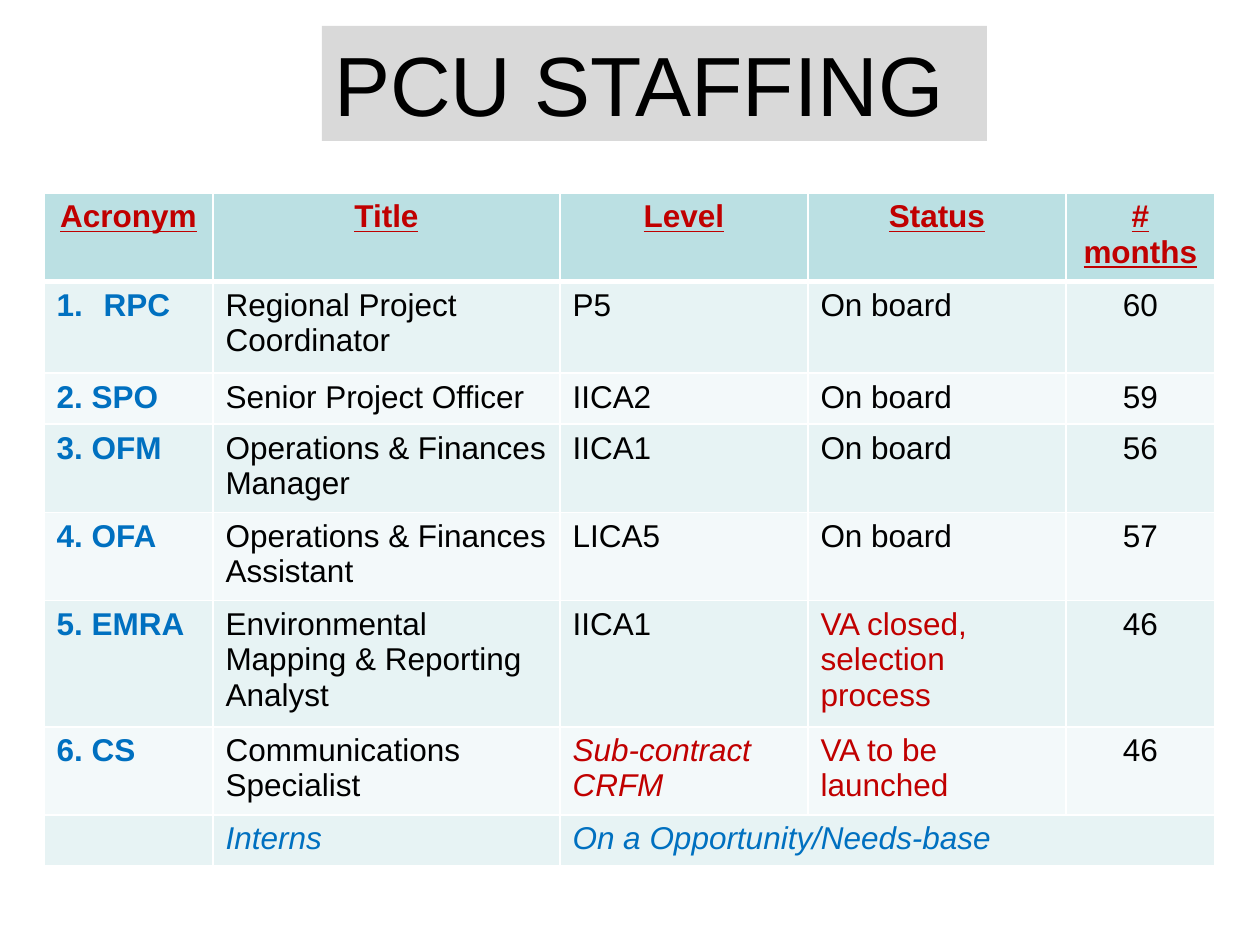
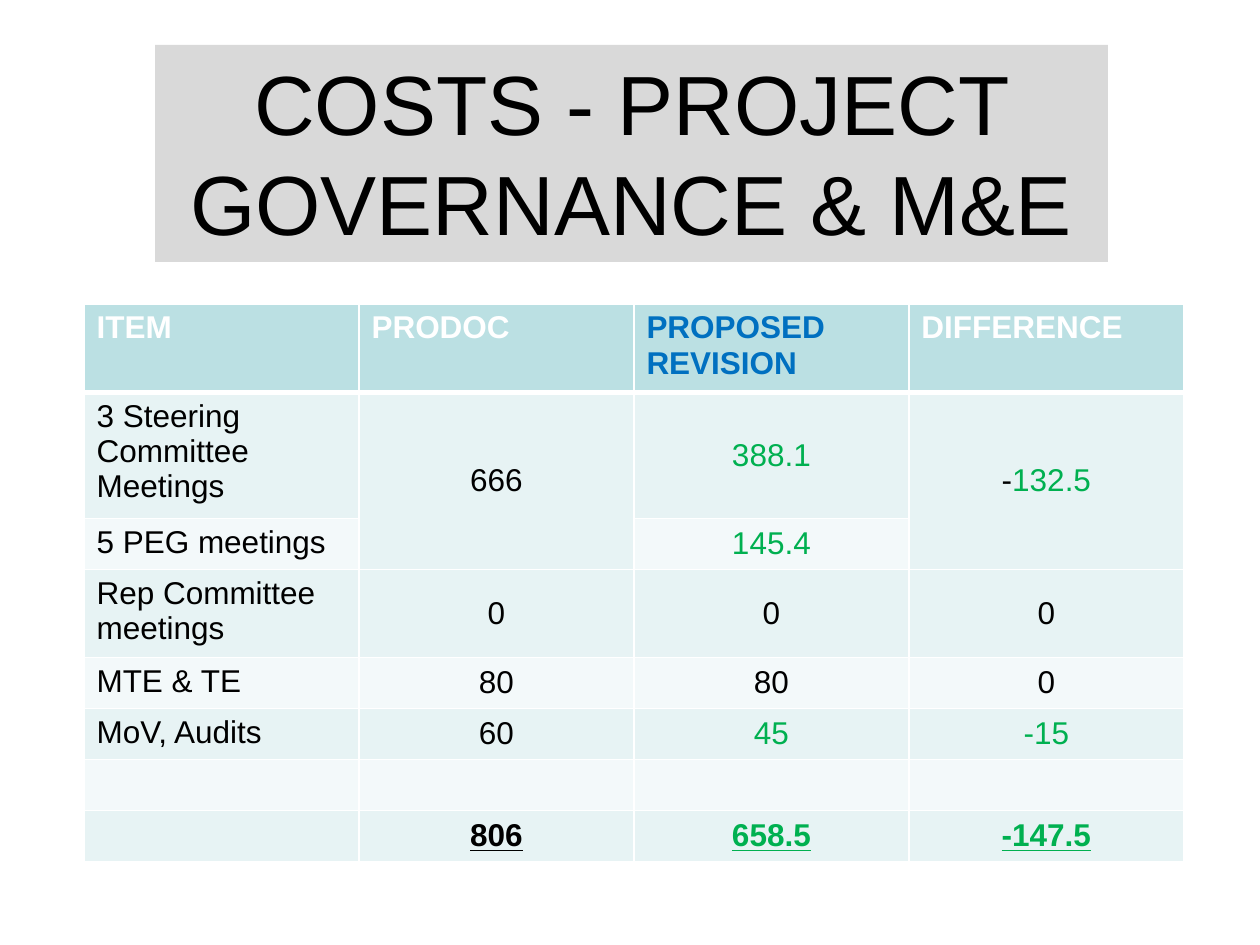
from lxml import etree
from pptx import Presentation
from pptx import util as u
from pptx.dml.color import RGBColor
from pptx.enum import shapes, text
from pptx.oxml import ns

PX = u.Inches(1) / 126
FONT = "Arial"
COLOURS = {
    "black": "000000", "white": "FFFFFF", "red": "C00000", "blue": "0070C0",
    "green": "00B050", "title": "D9D9D9", "header": "BBE0E3",
    "odd": "E7F3F4", "even": "F3F9FA",
}
BOLD = {"bold": True}
ITALIC = {"italic": True}
TOTAL = {"bold": True, "underline": True}

# Each style is a colour name and the emphasis set on the run.
STYLES = {
    "plain": ("black", {}),
    "green": ("green", {}),
    "red": ("red", {}),
    "acronym": ("blue", BOLD),
    "staff header": ("red", TOTAL),
    "cost header": ("white", BOLD),
    "red italic": ("red", ITALIC),
    "blue italic": ("blue", ITALIC),
    "total": ("black", TOTAL),
    "green total": ("green", TOTAL),
}

STAFF_HEADERS = ["Acronym", "Title", "Level", "Status", "# months"]
STAFF = [
    ["RPC", "Regional Project Coordinator", "P5", "On board", "60"],
    ["2. SPO", "Senior Project Officer", "IICA2", "On board", "59"],
    ["3. OFM", "Operations & Finances Manager", "IICA1", "On board", "56"],
    ["4. OFA", "Operations & Finances Assistant", "LICA5", "On board", "57"],
    ["5. EMRA", "Environmental Mapping & Reporting Analyst", "IICA1",
     ("VA closed, selection process", "red"), "46"],
    ["6. CS", "Communications Specialist", ("Sub-contract CRFM", "red italic"),
     ("VA to be launched", "red"), "46"],
    ["", ("Interns", "blue italic"),
     ("On a Opportunity/Needs-base", "blue italic"), "", ""],
]
COST_HEADERS = ["ITEM", "PRODOC", ("PROPOSED REVISION", "acronym"), "DIFFERENCE"]
COSTS = [
    ["3 Steering Committee Meetings", "666", ("388.1", "green"),
     [("-", "plain"), ("132.5", "green")]],
    ["5 PEG meetings", "", ("145.4", "green"), ""],
    ["Rep Committee meetings", "0", "0", "0"],
    ["MTE & TE", "80", "80", "0"],
    ["MoV, Audits", "60", ("45", "green"), ("-15", "green")],
    ["", "", "", ""],
    ["", ("806", "total"), ("658.5", "green total"), ("-147.5", "green total")],
]


def px(length):
    return u.Emu(round(length * PX))


def rgb(name):
    return RGBColor.from_string(COLOURS[name])


def format_run(run, size, style="plain"):
    colour, emphasis = STYLES[style]
    run.font.name = FONT
    run.font.size = u.Pt(size)
    run.font.color.rgb = rgb(colour)
    for name in ("bold", "italic", "underline"):
        setattr(run.font, name, emphasis.get(name, False))


def add_title(slide, box, title, alignment):
    shape = slide.shapes.add_shape(shapes.MSO_SHAPE.RECTANGLE, *map(px, box))
    shape.shadow.inherit = False
    shape.fill.solid()
    shape.fill.fore_color.rgb = rgb("title")
    shape.line.fill.background()
    frame = shape.text_frame
    frame.word_wrap = True
    frame.auto_size = text.MSO_AUTO_SIZE.SHAPE_TO_FIT_TEXT
    frame.vertical_anchor = text.MSO_ANCHOR.TOP
    frame.text = title
    frame.paragraphs[0].alignment = alignment
    format_run(frame.paragraphs[0].runs[0], 48)


def set_borders(cell, row):
    """White cell edges, with a thicker rule below the header row."""
    widths = {"L": 1, "R": 1, "T": 3 if row == 1 else 1, "B": 3 if row == 0 else 1}
    properties = cell._tc.get_or_add_tcPr()
    for side, width in widths.items():
        line = etree.SubElement(properties, ns.qn(f"a:ln{side}"), w=str(u.Pt(width)))
        fill = etree.SubElement(line, ns.qn("a:solidFill"))
        etree.SubElement(fill, ns.qn("a:srgbClr"), val=COLOURS["white"])


def number_paragraph(paragraph, indent):
    properties = paragraph._p.get_or_add_pPr()
    properties.set("marL", str(px(indent)))
    properties.set("indent", str(-px(indent)))
    etree.SubElement(properties, ns.qn("a:buFont"), typeface="+mj-lt")
    etree.SubElement(properties, ns.qn("a:buAutoNum"), type="arabicPeriod")


def fill_cell(cell, content, default_style, alignment):
    """Content is a string, a (string, style) pair or a list of such pairs."""
    if isinstance(content, str):
        content = (content, default_style)
    pieces = content if isinstance(content, list) else [content]
    paragraph = cell.text_frame.paragraphs[0]
    paragraph.alignment = alignment
    for words, style in pieces:
        if words:
            run = paragraph.add_run()
            run.text = words
            format_run(run, 18, style)


def add_banded_table(slide, left, top, widths, heights, rows, merges, cell_format):
    """cell_format(row, column) gives the default style, alignment and anchor."""
    frame = slide.shapes.add_table(len(rows), len(widths), px(left), px(top),
                                   px(sum(widths)), px(sum(heights)))
    table = frame.table
    for column, width in zip(table.columns, widths):
        column.width = px(width)
    for table_row, height in zip(table.rows, heights):
        table_row.height = px(height)
    for first, last in merges:
        table.cell(*first).merge(table.cell(*last))
    for row, contents in enumerate(rows):
        band = "header" if row == 0 else "odd" if row % 2 else "even"
        for column, content in enumerate(contents):
            cell = table.cell(row, column)
            set_borders(cell, row)
            cell.fill.solid()
            cell.fill.fore_color.rgb = rgb(band)
            style, alignment, anchor = cell_format(row, column)
            cell.vertical_anchor = anchor
            fill_cell(cell, content, style, alignment)
    return table


def staff_format(row, column):
    style = "staff header" if row == 0 else "plain" if column else "acronym"
    centred = row == 0 or column == 4
    alignment = text.PP_ALIGN.CENTER if centred else text.PP_ALIGN.LEFT
    return style, alignment, text.MSO_ANCHOR.TOP


def cost_format(row, column):
    style = "plain" if row else "cost header"
    if row and column:
        return style, text.PP_ALIGN.CENTER, text.MSO_ANCHOR.MIDDLE
    return style, text.PP_ALIGN.LEFT, text.MSO_ANCHOR.TOP


def build_staffing(slide):
    add_title(slide, (322, 26, 665, 115), "PCU STAFFING", text.PP_ALIGN.LEFT)
    table = add_banded_table(
        slide, 44, 193, [169, 347, 248, 258, 149], [83, 92, 51, 83, 83, 119, 83, 51],
        [STAFF_HEADERS] + STAFF, [((7, 2), (7, 4))], staff_format)
    number_paragraph(table.cell(1, 0).text_frame.paragraphs[0], 47)


def build_costs(slide):
    add_title(slide, (155, 45, 953, 217), "COSTS - PROJECT GOVERNANCE & M&E",
              text.PP_ALIGN.CENTER)
    add_banded_table(
        slide, 84, 304, [275] * 4, [88, 126, 51, 88, 51, 51, 51, 51],
        [COST_HEADERS] + COSTS, [((1, 1), (2, 1)), ((1, 3), (2, 3))], cost_format)


def main():
    presentation = Presentation()
    presentation.slide_width = u.Inches(10)
    presentation.slide_height = u.Inches(7.5)
    blank = presentation.slide_layouts[6]
    for build in (build_staffing, build_costs):
        build(presentation.slides.add_slide(blank))
    presentation.save("out.pptx")


if __name__ == "__main__":
    main()
